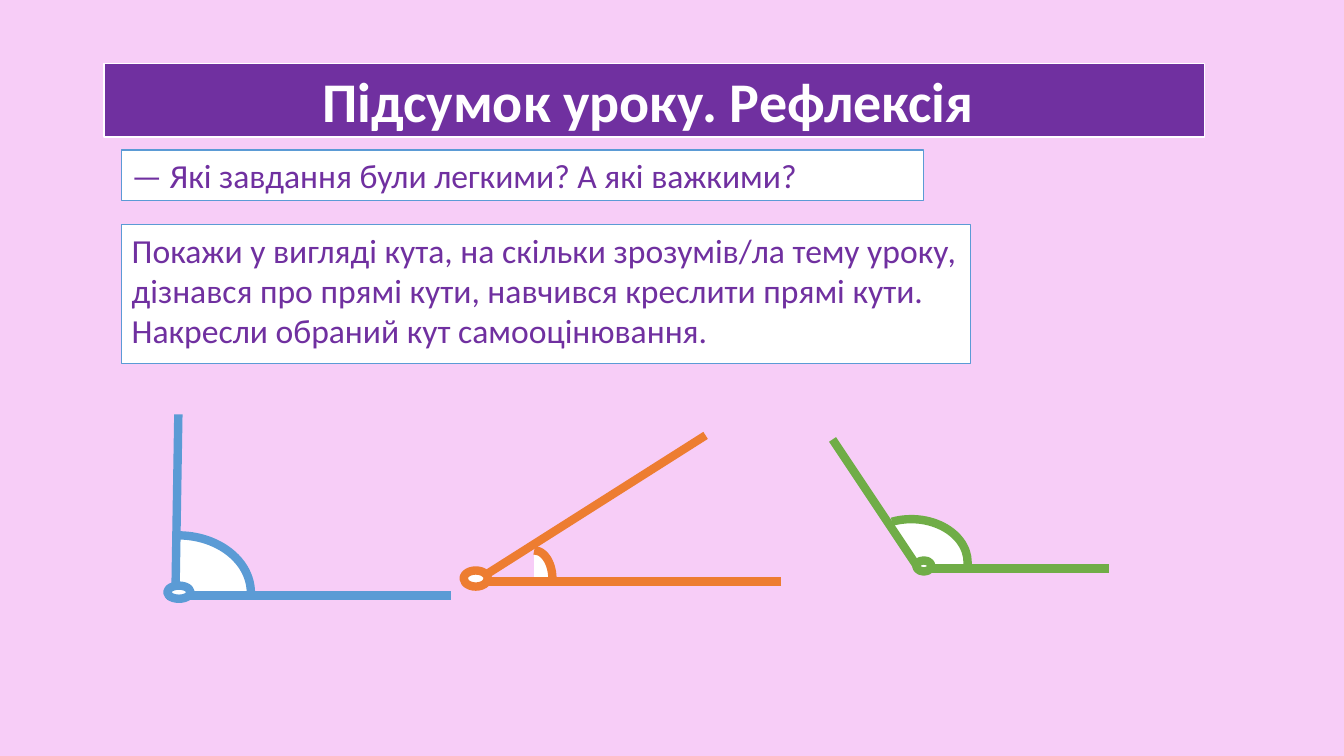
from lxml.etree import SubElement
from pptx import Presentation
from pptx.dml.color import RGBColor
from pptx.enum.shapes import MSO_CONNECTOR, MSO_SHAPE
from pptx.enum.text import MSO_ANCHOR, PP_ALIGN
from pptx.oxml.ns import qn
from pptx.util import Pt

COLORS = {
    "background": "F7CDF7",
    "purple": "7030A0",
    "white": "FFFFFF",
    "blue": "5B9BD5",
    "orange": "ED7D31",
    "green": "70AD47",
}
FONT = "Calibri"
QUESTION = ["— Які завдання були легкими? А які важкими?"]
TASK = [
    "Покажи у вигляді кута, на скільки зрозумів/ла тему уроку, "
    "дізнався про прямі кути, навчився креслити прямі кути.",
    "Накресли обраний кут самооцінювання.",
]
ANGLES = [
    {
        "color": "blue",
        "origin": (119.5, 296),
        "rays": [(5.8, 130.2, 7.9, 0), (202.3, 129.5, 0, 129.5)],
        "arc": (7.9, 127.4, 51.8, 41),
        "sweep": (270, 0),
        "vertex": (0, 122.3, 16.6, 9.4),
    },
    {
        "color": "orange",
        "origin": (331.2, 311),
        "rays": [(226.8, 104.4, 11.5, 104.4), (5.8, 105.9, 172.8, 0)],
        "arc": (50.4, 102.3, 13, 20.2),
        "sweep": (270, 0),
        "vertex": (0, 96.5, 17.3, 11.5),
    },
    {
        "color": "green",
        "origin": (594.7, 313.9),
        "rays": [(61.9, 92.9, 0, 0), (61.9, 92.2, 197.3, 92.2)],
        "arc": (56.2, 87.9, 40.3, 31),
        "sweep": (244.6, 4),
        "vertex": (59.8, 86.4, 10.8, 7.9),
    },
]


def rgb(name):
    return RGBColor.from_string(COLORS[name])


def add_outlined(shapes, kind, box, fill, line, width):
    shape = shapes.add_shape(kind, *(Pt(value) for value in box))
    shape.shadow.inherit = False
    shape.fill.solid()
    shape.fill.fore_color.rgb = rgb(fill)
    shape.line.color.rgb = rgb(line)
    shape.line.width = Pt(width)
    return shape


def add_panel(slide, box, texts, size, fill, line, color,
              align=PP_ALIGN.LEFT, anchor=MSO_ANCHOR.TOP, bold=False):
    panel = add_outlined(slide.shapes, MSO_SHAPE.RECTANGLE, box, fill, line, 1)
    frame = panel.text_frame
    frame.word_wrap = True
    frame.vertical_anchor = anchor
    for index, text in enumerate(texts):
        paragraph = frame.add_paragraph() if index else frame.paragraphs[0]
        paragraph.text = text
        paragraph.alignment = align
        paragraph.font.name = FONT
        paragraph.font.size = Pt(size)
        paragraph.font.bold = bold
        paragraph.font.color.rgb = rgb(color)


def add_angle(slide, angle):
    left, top = angle["origin"]
    color = angle["color"]
    shapes = slide.shapes.add_group_shape().shapes

    center_x, center_y, radius_x, radius_y = angle["arc"]
    arc_box = (left + center_x - radius_x, top + center_y - radius_y,
               2 * radius_x, 2 * radius_y)
    arc = add_outlined(shapes, MSO_SHAPE.ARC, arc_box, "white", color, 6)
    for index, degrees in enumerate(angle["sweep"]):
        arc.adjustments[index] = degrees * 0.6

    for start_x, start_y, end_x, end_y in angle["rays"]:
        ray = shapes.add_connector(
            MSO_CONNECTOR.STRAIGHT, Pt(left + start_x), Pt(top + start_y),
            Pt(left + end_x), Pt(top + end_y))
        ray.line.color.rgb = rgb(color)
        ray.line.width = Pt(6)
        SubElement(ray._element.spPr, qn("a:effectLst"))

    x, y, width, height = angle["vertex"]
    add_outlined(shapes, MSO_SHAPE.OVAL, (left + x, top + y, width, height),
                 "white", color, 6)


def main():
    presentation = Presentation()
    presentation.slide_width = Pt(960)
    presentation.slide_height = Pt(540)
    slide = presentation.slides.add_slide(presentation.slide_layouts[6])
    slide.background.fill.solid()
    slide.background.fill.fore_color.rgb = rgb("background")

    add_panel(slide, (74.4, 45.4, 786.2, 52.4), ["Підсумок уроку. Рефлексія "],
              40, "purple", "white", "white",
              PP_ALIGN.CENTER, MSO_ANCHOR.MIDDLE, True)
    add_panel(slide, (87, 107.2, 572.5, 36), QUESTION,
              24, "white", "blue", "purple")
    add_panel(slide, (87, 160.4, 606.4, 99.2), TASK,
              24, "white", "blue", "purple")
    for angle in ANGLES:
        add_angle(slide, angle)

    presentation.save("out.pptx")


if __name__ == "__main__":
    main()
